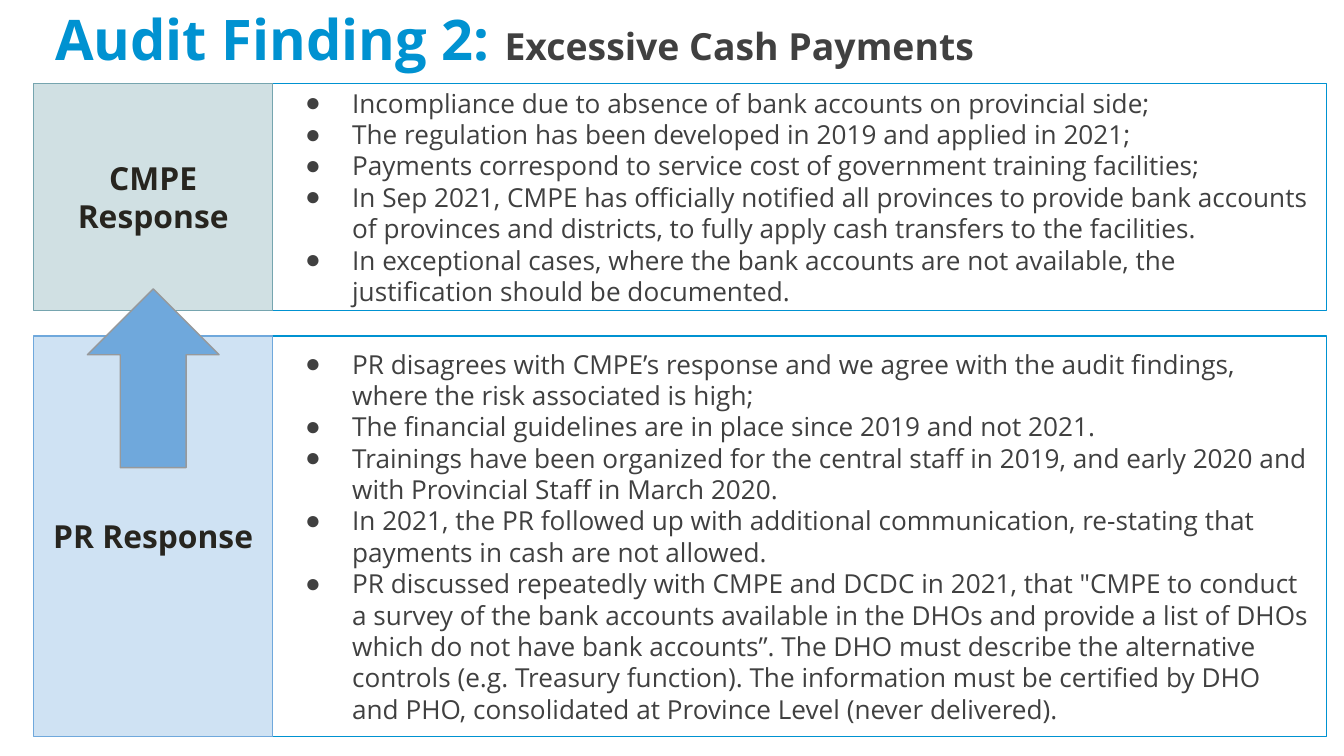
from lxml.etree import SubElement
from pptx import Presentation
from pptx.dml.color import RGBColor
from pptx.enum.shapes import MSO_SHAPE
from pptx.enum.text import MSO_ANCHOR, MSO_AUTO_SIZE, PP_ALIGN
from pptx.oxml.ns import qn
from pptx.util import Inches, Pt

FONT = "Open Sans"
COLORS = {
    "white": "FFFFFF",
    "accent": "0092D1",
    "body": "404040",
    "label": "27251F",
    "teal": "D0E0E3",
    "teal_line": "76A5AF",
    "sky": "CFE2F3",
    "blue": "6FA8DC",
    "gray": "97999B",
}
SLIDE_WIDTH = 10
SLIDE_HEIGHT = SLIDE_WIDTH * 9 / 16
LABEL_LEFT, LABEL_WIDTH = 0.25, 1.78
LIST_LEFT, LIST_WIDTH = 2.02, 7.85
RESPONSES = [
    ("CMPE Response", 0.62, 1.69, "teal", "teal_line", [
        "Incompliance due to absence of bank accounts on provincial side;",
        "The regulation has been developed in 2019 and applied in 2021;",
        "Payments correspond to service cost of government training facilities;",
        "In Sep 2021, CMPE has officially notified all provinces to provide bank accounts "
        "of provinces and districts, to fully apply cash transfers to the facilities.",
        "In exceptional cases, where the bank accounts are not available, the "
        "justification should be documented.",
    ]),
    ("PR Response", 2.5, 2.98, "sky", "blue", [
        "PR disagrees with CMPE’s response and we agree with the audit findings, "
        "where the risk associated is high;",
        "The financial guidelines are in place since 2019 and not 2021.",
        "Trainings have been organized for the central staff in 2019, and early 2020 and "
        "with Provincial Staff in March 2020.",
        "In 2021, the PR followed up with additional communication, re-stating that "
        "payments in cash are not allowed.",
        'PR discussed repeatedly with CMPE and DCDC in 2021, that "CMPE to conduct '
        "a survey of the bank accounts available in the DHOs and provide a list of DHOs "
        "which do not have bank accounts”. The DHO must describe the alternative "
        "controls (e.g. Treasury function). The information must be certified by DHO "
        "and PHO, consolidated at Province Level (never delivered).",
    ]),
]


def color(name):
    """Return the named palette colour."""
    return RGBColor.from_string(COLORS[name])


def place(shape, left, top, width, height):
    """Move and size a shape, in inches."""
    shape.left, shape.top = Inches(left), Inches(top)
    shape.width, shape.height = Inches(width), Inches(height)


def paint(shape, fill, line):
    """Give a shape its fill and thin outline."""
    shape.fill.solid()
    shape.fill.fore_color.rgb = color(fill)
    shape.line.color.rgb = color(line)
    shape.line.width = Pt(0.75)


def set_frame(shape, margin):
    """Centre the text vertically inside equal margins."""
    frame = shape.text_frame
    frame.word_wrap = True
    frame.auto_size = MSO_AUTO_SIZE.NONE
    frame.vertical_anchor = MSO_ANCHOR.MIDDLE
    frame.margin_left = frame.margin_right = Inches(margin)
    frame.margin_top = frame.margin_bottom = Inches(margin)
    return frame


def format_run(run, size, color_name, bold=False):
    """Set the font of a run."""
    run.font.name = FONT
    run.font.size = Pt(size)
    run.font.bold = bold
    run.font.color.rgb = color(color_name)


def add_bullet(paragraph):
    """Give a paragraph a round bullet with a hanging indent."""
    properties = paragraph._p.get_or_add_pPr()
    properties.set("marL", str(Inches(0.5)))
    properties.set("indent", str(Inches(-0.35)))
    bullet_color = SubElement(properties, qn("a:buClr"))
    SubElement(bullet_color, qn("a:srgbClr"), val=COLORS["body"])
    SubElement(properties, qn("a:buFont"), typeface="Arial")
    SubElement(properties, qn("a:buChar"), char="●")


def fill_title(title):
    """Write the two-part slide title."""
    place(title, 0.41, -0.13, 8.6, 0.82)
    paragraph = set_frame(title, 0).paragraphs[0]
    paragraph.alignment = PP_ALIGN.LEFT
    for text, size, color_name in (
        ("Audit Finding 2: ", 30, "accent"),
        ("Excessive Cash Payments", 20, "body"),
    ):
        run = paragraph.add_run()
        run.text = text
        format_run(run, size, color_name, bold=True)


def fill_list(placeholder, top, height, items):
    """Turn a body placeholder into an outlined bullet list."""
    place(placeholder, LIST_LEFT, top, LIST_WIDTH, height)
    paint(placeholder, "white", "accent")
    frame = set_frame(placeholder, 0.1)
    frame.text = "\n".join(items)
    for paragraph in frame.paragraphs:
        add_bullet(paragraph)
        paragraph.space_before = Pt(0)
        format_run(paragraph.runs[0], 14, "body")


def add_shape(slide, kind, box, fill, line):
    """Add a flat preset shape."""
    shape = slide.shapes.add_shape(kind, *map(Inches, box))
    shape.shadow.inherit = False
    paint(shape, fill, line)
    return shape


def add_label(slide, text, top, height, fill, line):
    """Add the coloured panel that names a response."""
    box = (LABEL_LEFT, top, LABEL_WIDTH, height)
    frame = set_frame(add_shape(slide, MSO_SHAPE.RECTANGLE, box, fill, line), 0.1)
    frame.text = text
    paragraph = frame.paragraphs[0]
    paragraph.alignment = PP_ALIGN.CENTER
    format_run(paragraph.runs[0], 17, "label", bold=True)


def main():
    """Build and save the slide."""
    presentation = Presentation()
    presentation.slide_width = Inches(SLIDE_WIDTH)
    presentation.slide_height = Inches(SLIDE_HEIGHT)
    slide = presentation.slides.add_slide(presentation.slide_layouts.get_by_name("Two Content"))
    title, *bodies = slide.placeholders
    fill_title(title)
    for body, (name, top, height, fill, line, items) in zip(bodies, RESPONSES):
        fill_list(body, top, height, items)
        add_label(slide, name, top, height, fill, line)
    add_shape(slide, MSO_SHAPE.UP_ARROW, (0.65, 2.15, 0.98, 1.33), "blue", "gray")
    presentation.save("out.pptx")


if __name__ == "__main__":
    main()
